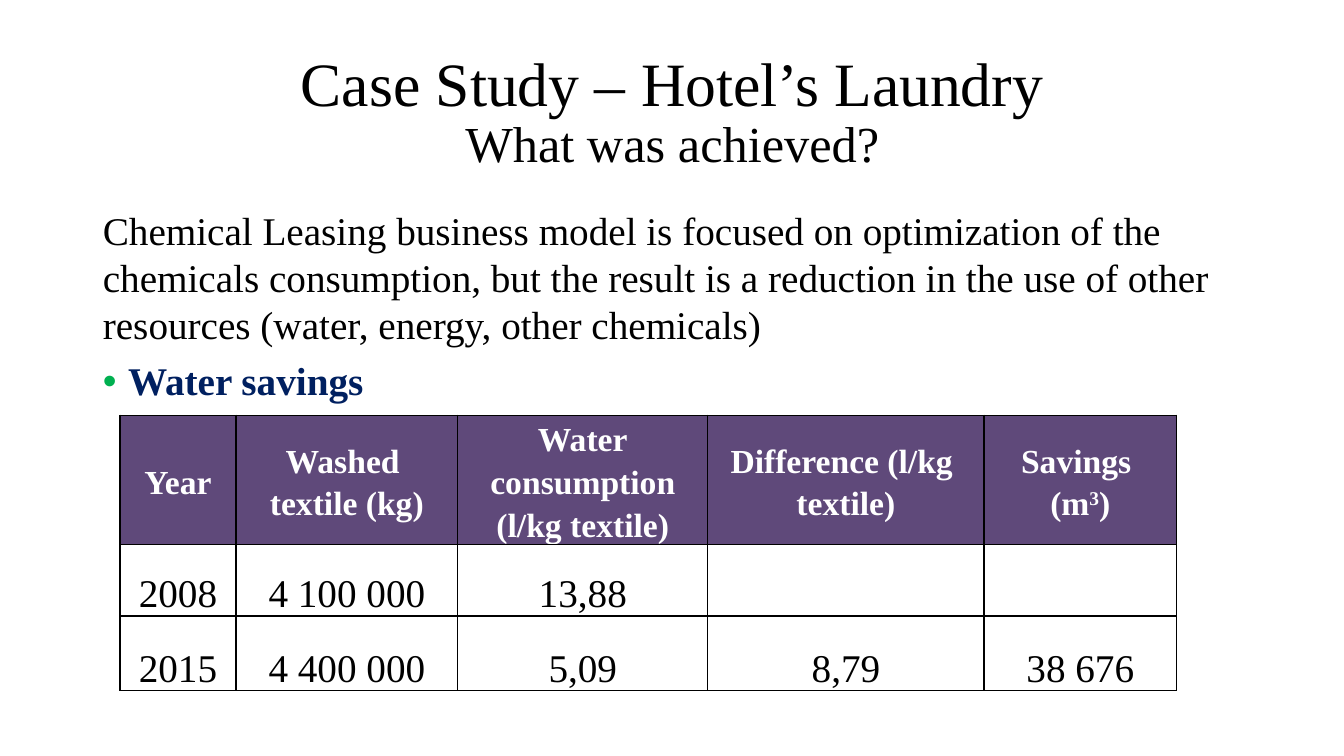
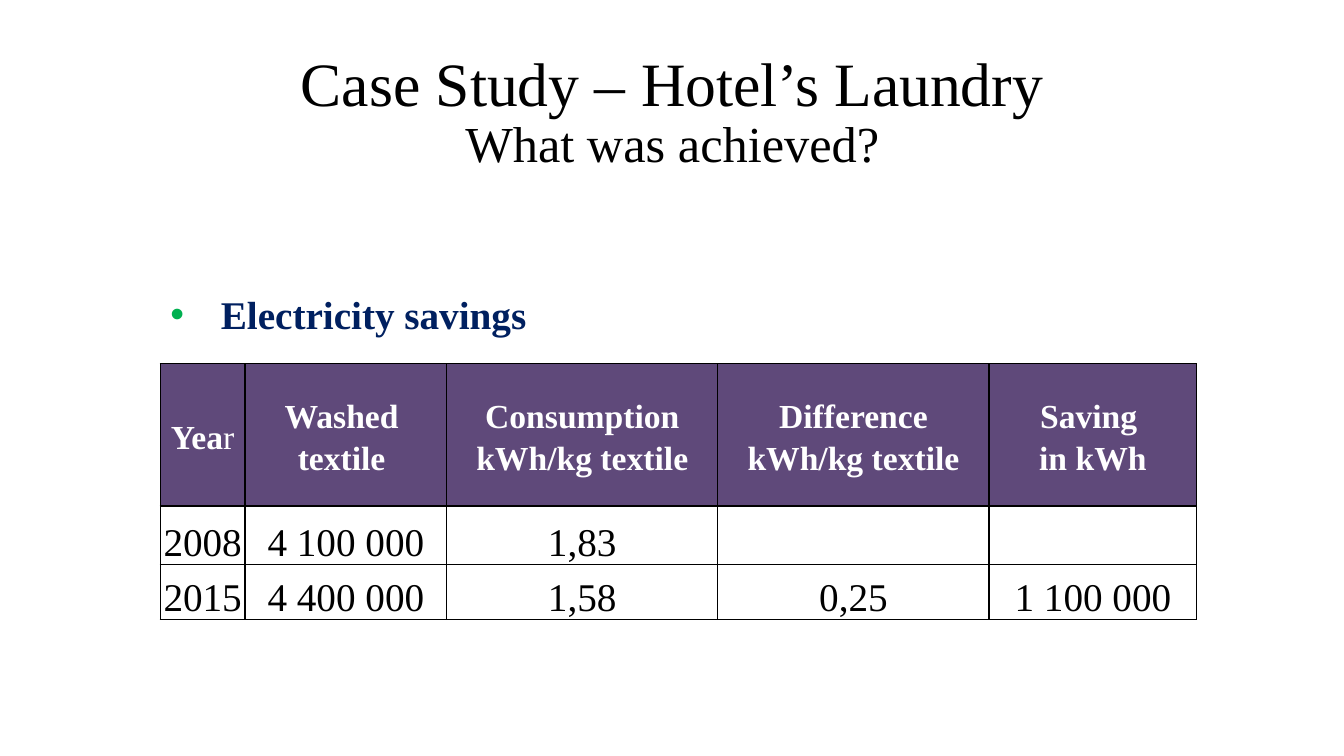
from dataclasses import dataclass

from lxml.etree import SubElement
from pptx import Presentation
from pptx.dml.color import RGBColor
from pptx.enum.text import MSO_ANCHOR as Anchor, MSO_AUTO_SIZE as AutoSize, PP_ALIGN as Align
from pptx.oxml.ns import qn
from pptx.util import Inches, Pt

# Shared look
FONT = "Times New Roman"
BLACK = RGBColor(0x00, 0x00, 0x00)
WHITE = RGBColor(0xFF, 0xFF, 0xFF)
NAVY = RGBColor(0x00, 0x20, 0x60)
GREEN = RGBColor(0x00, 0xB0, 0x50)
PURPLE = RGBColor(0x5F, 0x49, 0x7A)
TITLE_AND_CONTENT = 1


@dataclass(frozen=True)
class Span:
    text: str
    size: float = 28
    color: RGBColor = BLACK
    bold: bool = False
    baseline: int = 0


@dataclass(frozen=True)
class Area:
    left: float
    top: float
    width: float
    height: float


@dataclass(frozen=True)
class SavingsTable:
    area: Area
    columns: tuple[float, ...]
    rows: tuple[float, ...]
    header: tuple[tuple[Span, ...], ...]
    values: tuple[tuple[str, ...], ...]


@dataclass(frozen=True)
class Page:
    body: Area
    intro: str
    topic: str
    topic_indent: float
    topic_spacing: float
    topic_gap: float
    table: SavingsTable


def head(text: str, bold: bool = True, baseline: int = 0) -> Span:
    return Span(text, 24, WHITE, bold, baseline)


TITLE_AREA = Area(0.92, 0.4, 11.5, 1.45)
TITLE = (Span("Case Study – Hotel’s Laundry\n", 44), Span("What was achieved?", 36))

PAGES = (
    Page(
        body=Area(0.92, 2, 11.5, 2.1),
        intro="Chemical Leasing business model is focused on optimization of the "
              "chemicals consumption, but the result is a reduction in the use of "
              "other resources (water, energy, other chemicals)",
        topic="Water savings", topic_indent=0.25, topic_spacing=0.9, topic_gap=10,
        table=SavingsTable(
            area=Area(1.19, 4.12, 10.48, 2.73),
            columns=(1.15, 2.2, 2.48, 2.74, 1.91),
            rows=(1.28, 0.71, 0.74),
            header=(
                (head("Year"),),
                (head("Washed \ntextile (kg)"),),
                (head("Water\nconsumption\n(l/kg textile)"),),
                (head("Difference (l/kg \ntextile)"),),
                (head("Savings \n(m"), head("3", baseline=30), head(")")),
            ),
            values=(
                ("2008", "4 100 000", "13,88", "", ""),
                ("2015", "4 400 000", "5,09", "8,79", "38 676"),
            ),
        ),
    ),
    Page(
        body=Area(1.59, 2.83, 4, 0.57),
        intro="",
        topic="Electricity savings", topic_indent=0.5, topic_spacing=1, topic_gap=0,
        table=SavingsTable(
            area=Area(1.59, 3.61, 10.28, 2.54),
            columns=(0.84, 2, 2.69, 2.69, 2.06),
            rows=(1.41, 0.58, 0.55),
            header=(
                (head("Yea"), head("r", bold=False)),
                (head("Washed \ntextile "),),
                (head("Consumption kWh/kg textile"),),
                (head("Difference kWh/kg textile"),),
                (head("Saving \nin kWh"),),
            ),
            values=(
                ("2008", "4 100 000", "1,83", "", ""),
                ("2015", "4 400 000", "1,58", "0,25", "1 100 000"),
            ),
        ),
    ),
)


def write_spans(para, spans: tuple[Span, ...]) -> None:
    """Add the spans as runs; a newline becomes a line break."""
    for span in spans:
        for number, line in enumerate(span.text.split("\n")):
            if number:
                para.add_line_break()
            if not line:
                continue
            run = para.add_run()
            run.text = line
            run.font.name = FONT
            run.font.size = Pt(span.size)
            run.font.bold = span.bold
            run.font.color.rgb = span.color
            if span.baseline:
                run.font._element.set("baseline", str(span.baseline * 1000))


def place(box, area: Area, anchor: Anchor) -> None:
    box.left, box.top = Inches(area.left), Inches(area.top)
    box.width, box.height = Inches(area.width), Inches(area.height)
    box.text_frame.word_wrap = True
    box.text_frame.auto_size = AutoSize.NONE
    box.text_frame.vertical_anchor = anchor


def set_bullet(para, indent: float) -> None:
    """Hang a green bullet, or remove the bullet when the indent is zero."""
    properties = para._p.get_or_add_pPr()
    properties.set("marL", str(Inches(indent)))
    properties.set("indent", str(-Inches(indent)))
    if not indent:
        SubElement(properties, qn("a:buNone"))
        return
    color = SubElement(properties, qn("a:buClr"))
    SubElement(color, qn("a:srgbClr"), val=str(GREEN))
    SubElement(properties, qn("a:buFont"), typeface="Arial")
    SubElement(properties, qn("a:buChar"), char="•")


def add_title(slide) -> None:
    title = slide.shapes.title
    place(title, TITLE_AREA, Anchor.MIDDLE)
    para = title.text_frame.paragraphs[0]
    para.alignment = Align.CENTER
    para.line_spacing = 0.9
    write_spans(para, TITLE)


def add_body(slide, page: Page) -> None:
    body = slide.placeholders[1]
    place(body, page.body, Anchor.TOP)
    para = body.text_frame.paragraphs[0]
    if page.intro:
        para.space_before = Pt(5.6)
        set_bullet(para, 0)
        write_spans(para, (Span(page.intro),))
        para = body.text_frame.add_paragraph()
    para.line_spacing = page.topic_spacing
    para.space_before = Pt(page.topic_gap)
    set_bullet(para, page.topic_indent)
    write_spans(para, (Span(page.topic, color=NAVY, bold=True),))


def set_borders(cell) -> None:
    properties = cell._tc.get_or_add_tcPr()
    for position, side in enumerate(("a:lnL", "a:lnR", "a:lnT", "a:lnB")):
        line = SubElement(properties, qn(side), w=str(Pt(1)))
        fill = SubElement(line, qn("a:solidFill"))
        SubElement(fill, qn("a:srgbClr"), val=str(BLACK))
        properties.insert(position, line)


def fill_cell(cell, spans: tuple[Span, ...], color: RGBColor, anchor: Anchor) -> None:
    cell.margin_left = cell.margin_right = cell.margin_top = Inches(0.01)
    cell.margin_bottom = 0
    cell.vertical_anchor = anchor
    cell.fill.solid()
    cell.fill.fore_color.rgb = color
    set_borders(cell)
    para = cell.text_frame.paragraphs[0]
    para.alignment = Align.CENTER
    para.line_spacing = 1.15
    write_spans(para, spans)


def add_savings_table(slide, spec: SavingsTable) -> None:
    area = spec.area
    table = slide.shapes.add_table(
        len(spec.rows), len(spec.columns), Inches(area.left), Inches(area.top),
        Inches(area.width), Inches(area.height)).table
    table.first_row = table.horz_banding = False
    for column, width in zip(table.columns, spec.columns):
        column.width = Inches(width)
    for row, height in zip(table.rows, spec.rows):
        row.height = Inches(height)
    for index, spans in enumerate(spec.header):
        fill_cell(table.cell(0, index), spans, PURPLE, Anchor.MIDDLE)
    for row_index, values in enumerate(spec.values, start=1):
        for index, value in enumerate(values):
            fill_cell(table.cell(row_index, index), (Span(value),), WHITE, Anchor.BOTTOM)


def main() -> None:
    deck = Presentation()
    deck.slide_width, deck.slide_height = Inches(13.33), Inches(7.5)
    for page in PAGES:
        slide = deck.slides.add_slide(deck.slide_layouts[TITLE_AND_CONTENT])
        add_title(slide)
        add_body(slide, page)
        add_savings_table(slide, page.table)
    deck.save("out.pptx")


if __name__ == "__main__":
    main()
